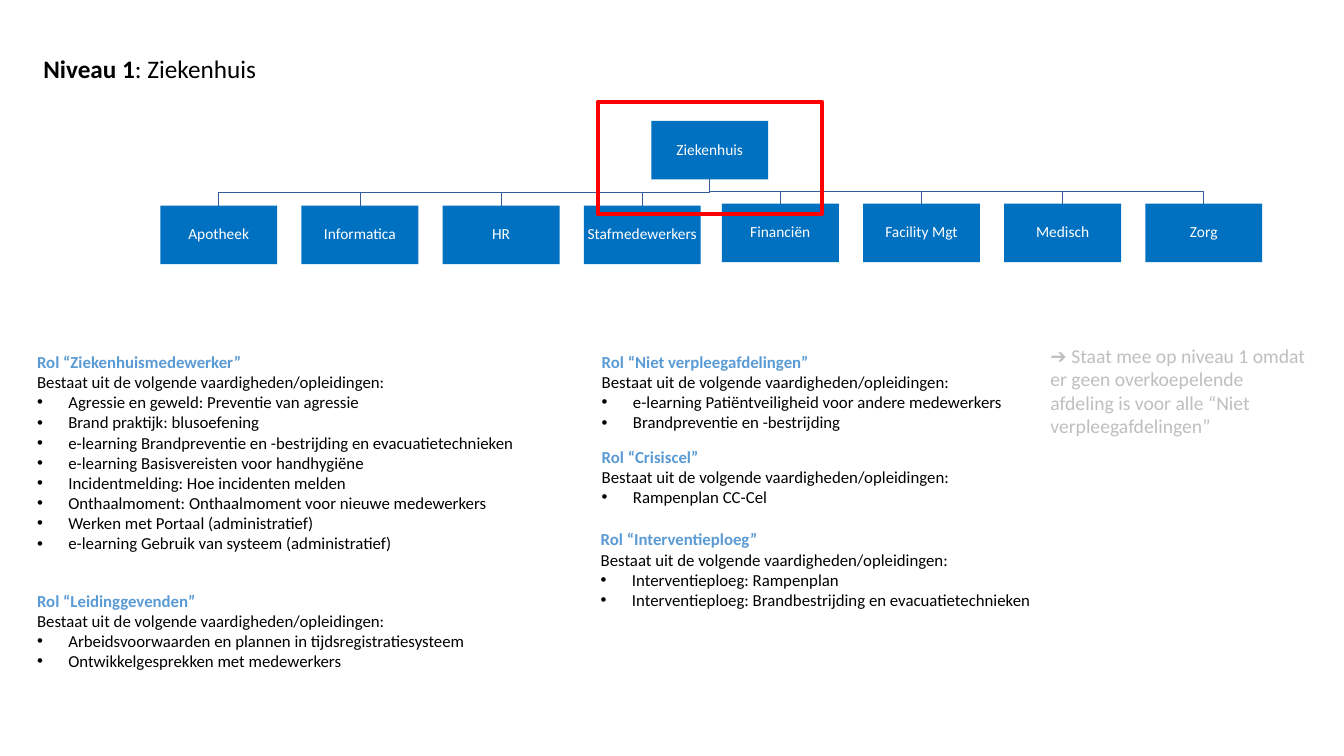
from lxml import etree
from pptx import Presentation
from pptx.dml.color import RGBColor
from pptx.enum.shapes import MSO_SHAPE as Preset
from pptx.enum.text import MSO_ANCHOR as Anchor, MSO_AUTO_SIZE as AutoSize, PP_ALIGN as Align
from pptx.oxml.ns import qn
from pptx.util import Inches, Pt

COLORS = {
    "box": "0070C0", "link": "365B9D", "frame": "FF0000", "role": "5B9BD5",
    "text": "000000", "note": "BFBFBF", "white": "FFFFFF",
}
FONT = "Calibri"

TITLE = ("Niveau 1", ": Ziekenhuis")
ROOT = "Ziekenhuis"
BRANCHES = [
    (1.59, 2.04, ["Apotheek", "Informatica", "HR", "Stafmedewerkers"]),
    (7.16, 2.02, ["Financiën", "Facility Mgt", "Medisch", "Zorg"]),
]
INTRO = "Bestaat uit de volgende vaardigheden/opleidingen:"
ROLES = [
    (0.27, 3.44, 5.1, "Rol “Ziekenhuismedewerker”", [
        "Agressie en geweld: Preventie van agressie",
        "Brand praktijk: blusoefening",
        "e-learning Brandpreventie en -bestrijding en evacuatietechnieken",
        "e-learning Basisvereisten voor handhygiëne",
        "Incidentmelding: Hoe incidenten melden",
        "Onthaalmoment: Onthaalmoment voor nieuwe medewerkers",
        "Werken met Portaal (administratief)",
        "e-learning Gebruik van systeem (administratief)",
    ]),
    (0.27, 5.81, 5.1, "Rol “Leidinggevenden”", [
        "Arbeidsvoorwaarden en plannen in tijdsregistratiesysteem",
        "Ontwikkelgesprekken met medewerkers",
    ]),
    (5.87, 3.44, 4.6, "Rol “Niet verpleegafdelingen”", [
        "e-learning Patiëntveiligheid voor andere medewerkers",
        "Brandpreventie en -bestrijding",
    ]),
    (5.87, 4.38, 4.6, "Rol “Crisiscel”", ["Rampenplan CC-Cel"]),
    (5.86, 5.2, 4.6, "Rol “Interventieploeg”", [
        "Interventieploeg: Rampenplan",
        "Interventieploeg: Brandbestrijding en evacuatietechnieken",
    ]),
]
NOTE = ("➔ Staat mee op niveau 1 omdat er geen overkoepelende afdeling "
        "is voor alle “Niet verpleegafdelingen”")

BOX_W, BOX_H, BOX_STEP = 1.16, 0.58, 1.4
ROOT_LEFT, ROOT_TOP = 6.46, 1.2
LINE_H, PADDING = 0.2, 0.1
BULLET_INDENT = 0.31


def rgb(name):
    return RGBColor.from_string(COLORS[name])


def style(run, size, color, bold=False):
    run.font.name = FONT
    run.font.size = Pt(size)
    run.font.bold = bold
    run.font.color.rgb = rgb(color)


def add_link(slide, child_left, child_top):
    start_x, start_y = ROOT_LEFT + BOX_W / 2, ROOT_TOP + BOX_H
    end_x = child_left + BOX_W / 2
    bend_y = (start_y + child_top) / 2
    builder = slide.shapes.build_freeform(Inches(start_x), Inches(start_y))
    corners = [(start_x, bend_y), (end_x, bend_y), (end_x, child_top)]
    builder.add_line_segments([(Inches(x), Inches(y)) for x, y in corners], close=False)
    link = builder.convert_to_shape()
    link.shadow.inherit = False
    link.fill.background()
    link.line.color.rgb = rgb("link")
    link.line.width = Pt(0.5)


def add_unit(slide, label, left, top):
    unit = slide.shapes.add_shape(
        Preset.RECTANGLE, Inches(left), Inches(top), Inches(BOX_W), Inches(BOX_H))
    unit.shadow.inherit = False
    unit.fill.solid()
    unit.fill.fore_color.rgb = rgb("box")
    unit.line.fill.background()
    frame = unit.text_frame
    frame.margin_left = frame.margin_right = Inches(0.01)
    frame.margin_top = frame.margin_bottom = Inches(0.01)
    frame.vertical_anchor = Anchor.MIDDLE
    frame.text = label
    paragraph = frame.paragraphs[0]
    paragraph.alignment = Align.CENTER
    paragraph.line_spacing = 0.9
    style(paragraph.runs[0], 11, "white")


def add_text(slide, left, top, width, height, lines):
    box = slide.shapes.add_textbox(Inches(left), Inches(top), Inches(width), Inches(height))
    box.text_frame.word_wrap = True
    box.text_frame.text = "\n".join(lines)
    return box.text_frame.paragraphs


def add_bullet(paragraph):
    props = paragraph._p.get_or_add_pPr()
    props.set("marL", str(Inches(BULLET_INDENT)))
    props.set("indent", str(-Inches(BULLET_INDENT)))
    etree.SubElement(props, qn("a:buFont")).set("typeface", "Arial")
    etree.SubElement(props, qn("a:buChar")).set("char", "•")


def add_role(slide, left, top, width, role, skills):
    lines = [role, INTRO] + skills
    height = LINE_H * len(lines) + PADDING
    heading, intro, *items = add_text(slide, left, top, width, height, lines)
    for item in items:
        add_bullet(item)
    style(heading.runs[0], 12, "role", bold=True)
    for paragraph in [intro] + items:
        style(paragraph.runs[0], 12, "text")


def add_title(slide):
    title = slide.shapes.title
    title.left, title.top = Inches(0.33), Inches(0.48)
    title.width, title.height = Inches(4.06), Inches(0.4)
    frame = title.text_frame
    frame.auto_size = AutoSize.NONE
    frame.vertical_anchor = Anchor.MIDDLE
    level, name = TITLE
    frame.text = level
    paragraph = frame.paragraphs[0]
    paragraph.alignment = Align.LEFT
    paragraph.add_run().text = name
    style(paragraph.runs[0], 18, "text", bold=True)
    style(paragraph.runs[1], 18, "text")


def main():
    deck = Presentation()
    deck.slide_width, deck.slide_height = Inches(13.33), Inches(7.5)
    slide = deck.slides.add_slide(deck.slide_layouts[5])
    add_title(slide)

    units = [(label, left + i * BOX_STEP, top)
             for left, top, labels in BRANCHES for i, label in enumerate(labels)]
    for label, left, top in units:
        add_link(slide, left, top)
    for label, left, top in [(ROOT, ROOT_LEFT, ROOT_TOP)] + units:
        add_unit(slide, label, left, top)

    highlight = slide.shapes.add_shape(
        Preset.RECTANGLE, Inches(5.93), Inches(1.01), Inches(2.22), Inches(1.11))
    highlight.shadow.inherit = False
    highlight.fill.background()
    highlight.line.color.rgb = rgb("frame")
    highlight.line.width = Pt(3)

    for role in ROLES:
        add_role(slide, *role)
    note = add_text(slide, 10.32, 3.36, 2.74, 1.04, [NOTE])[0]
    style(note.runs[0], 14, "note")
    deck.save("out.pptx")


if __name__ == "__main__":
    main()
